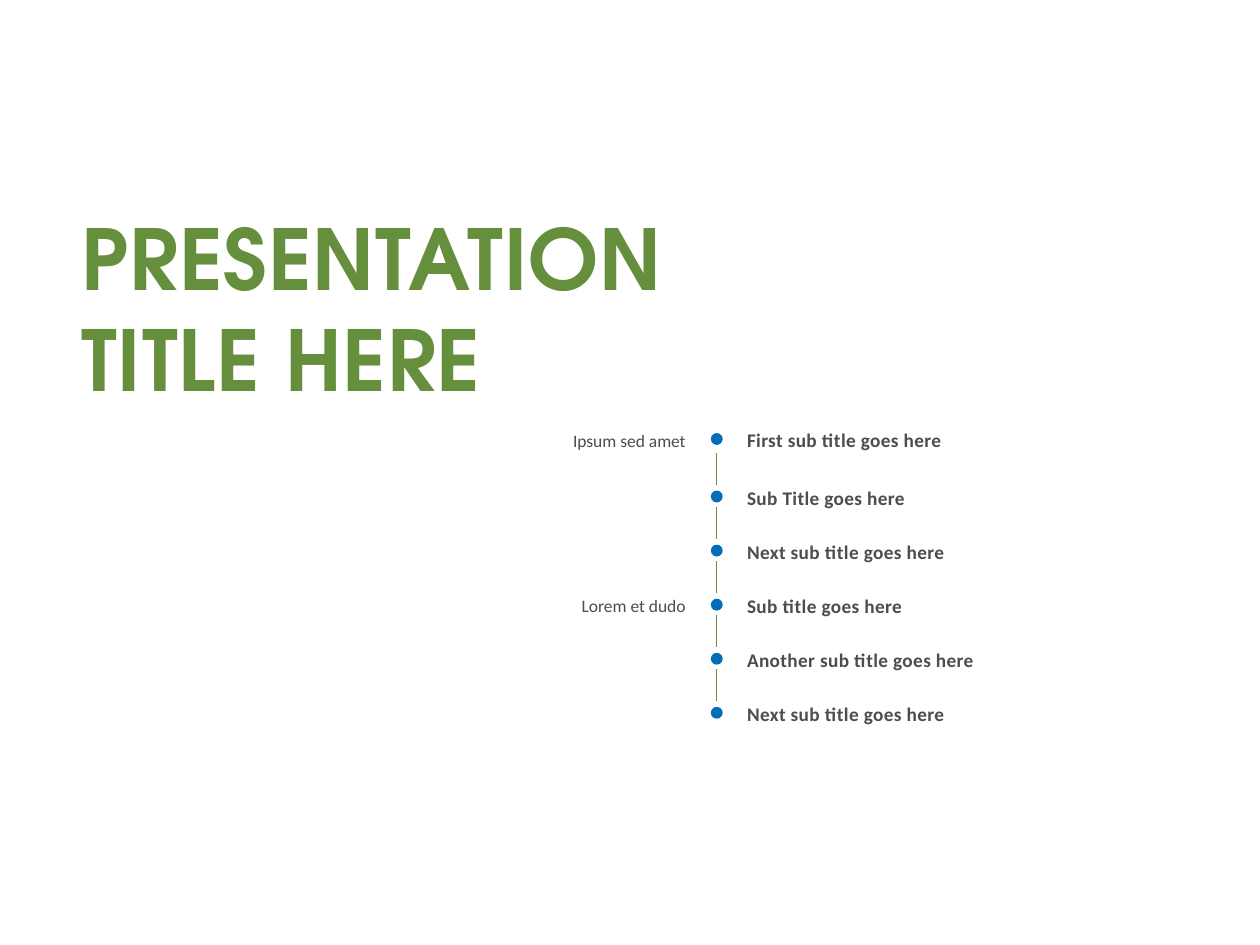
import pptx
import pptx.dml.color
import pptx.enum.shapes
import pptx.enum.text
import pptx.oxml.ns
import pptx.util
import lxml.etree

Cm = pptx.util.Cm
Pt = pptx.util.Pt
ALIGN = pptx.enum.text.PP_ALIGN

COLORS = {"title": "658E3D", "line": "658E3C", "dot": "036EB7", "text": "4D4D4D"}


def rgb(name):
    return pptx.dml.color.RGBColor.from_string(COLORS[name])


def add_text(shapes, text, left, top, width, height, font, size, color,
             bold=False, spacing=0, align=ALIGN.LEFT):
    box = shapes.add_textbox(Cm(left), Cm(top), Cm(width), Cm(height))
    frame = box.text_frame
    frame.margin_left = frame.margin_right = frame.margin_top = frame.margin_bottom = 0
    frame.word_wrap = True
    frame.auto_size = pptx.enum.text.MSO_AUTO_SIZE.SHAPE_TO_FIT_TEXT
    frame.text = text
    for paragraph in frame.paragraphs:
        paragraph.alignment = align
        for span in paragraph.runs:
            span.font.name = font
            span.font.size = Pt(size)
            span.font.bold = bold
            span.font.color.rgb = rgb(color)
            if spacing:
                # Letter spacing in hundredths of a point
                span._r.get_or_add_rPr().set("spc", str(spacing))


deck = pptx.Presentation()
deck.slide_width = Cm(25.4)
deck.slide_height = Cm(19.05)
page = deck.slides.add_slide(deck.slide_layouts[6])

# Title
add_text(page.shapes, "PRESENTATION\nTITLE HERE", 1.65, 4.17, 22.1, 4.11,
         "TeX Gyre Adventor", 48, "title", bold=True, spacing=50)

# Timeline: label on the left, subtitle on the right
rows = [
    ("Ipsum sed amet", "First sub title goes here"),
    ("", "Sub Title goes here"),
    ("", "Next sub title goes here"),
    ("Lorem et dudo", "Sub title goes here"),
    ("", "Another sub title goes here"),
    ("", "Next sub title goes here"),
]
first_top, second_top, row_step = 8.64, 9.8, 1.09
axis_x, dot_size, line_length = 14.45, 0.24, 0.64
timeline = page.shapes.add_group_shape().shapes

for index, (label, subtitle) in enumerate(rows):
    top = second_top + (index - 1) * row_step if index else first_top

    add_text(timeline, subtitle, 15.06, top, 8.69, 0.48, "Calibri", 11, "text",
             bold=True, spacing=20)
    if label:
        add_text(timeline, label, 11.2, top + 0.02, 2.62, 0.43, "Calibri", 10, "text",
                 align=ALIGN.RIGHT)

    # Dot on the axis
    dot = timeline.add_shape(pptx.enum.shapes.MSO_SHAPE.OVAL,
                             Cm(axis_x - dot_size / 2), Cm(top + 0.09),
                             Cm(dot_size), Cm(dot_size))
    dot.shadow.inherit = False
    dot.fill.solid()
    dot.fill.fore_color.rgb = rgb("dot")
    dot.line.fill.background()

    # Line down from the row above
    if index:
        end = top - 0.03
        line = timeline.add_connector(pptx.enum.shapes.MSO_CONNECTOR.STRAIGHT,
                                      Cm(axis_x), Cm(end - line_length),
                                      Cm(axis_x), Cm(end))
        line.line.color.rgb = rgb("line")
        line.line.width = Pt(0.75)
        lxml.etree.SubElement(line._element.spPr, pptx.oxml.ns.qn("a:effectLst"))

deck.save("out.pptx")
